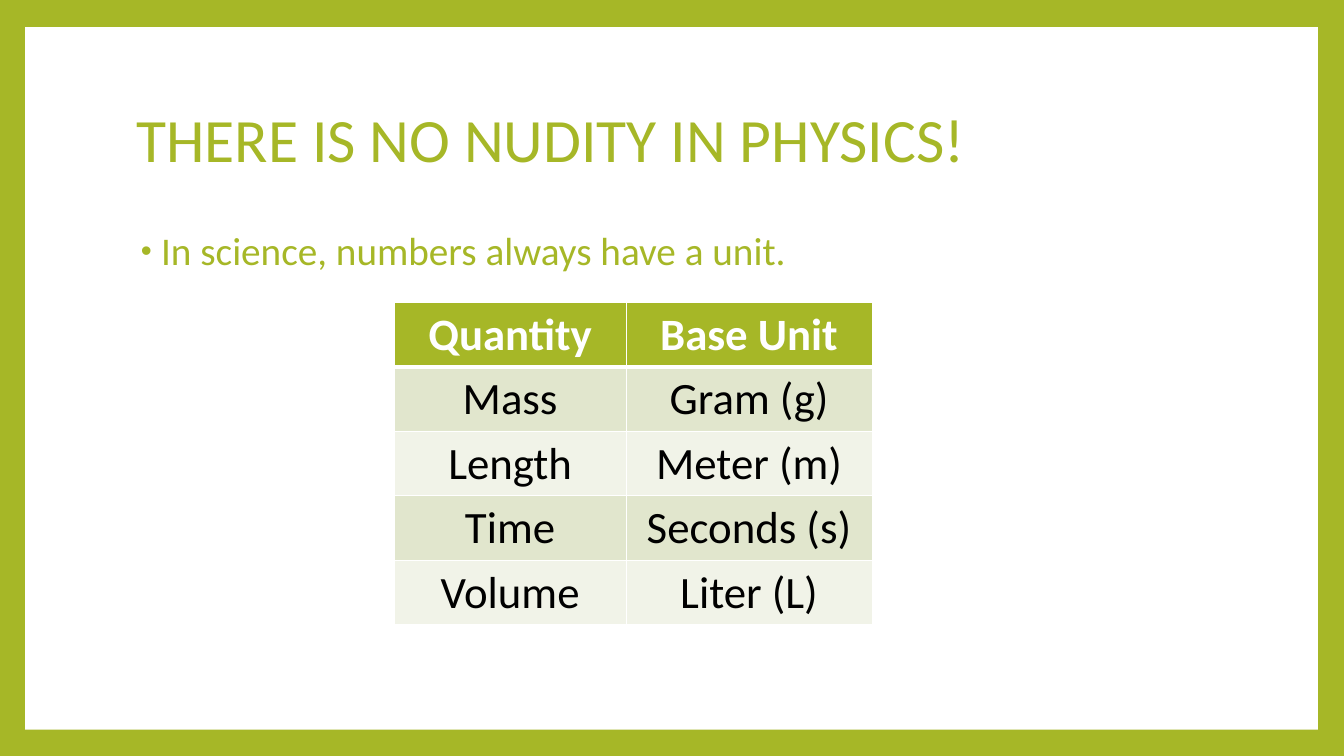
import pptx
import pptx.util
import pptx.dml.color
import pptx.enum.shapes
import pptx.enum.text
import pptx.oxml
import pptx.oxml.ns
import lxml.etree

Inches, Pt = pptx.util.Inches, pptx.util.Pt
RGBColor = pptx.dml.color.RGBColor
PP_ALIGN = pptx.enum.text.PP_ALIGN
MSO_ANCHOR = pptx.enum.text.MSO_ANCHOR
qn = pptx.oxml.ns.qn

HEADING = "THERE IS NO NUDITY IN PHYSICS!"
STATEMENT = "In science, numbers always have a unit."
UNITS = [
    ("Quantity", "Base Unit"),
    ("Mass", "Gram (g)"),
    ("Length", "Meter (m)"),
    ("Time", "Seconds (s)"),
    ("Volume", "Liter (L)"),
]
COLUMN_WIDTHS = (2.3, 2.44)
ROW_HEIGHT = 0.64

FONT = "Calibri"
GREEN = RGBColor(0xA6, 0xB7, 0x27)
WHITE = RGBColor(0xFF, 0xFF, 0xFF)
BLACK = RGBColor(0x00, 0x00, 0x00)
DARK_BAND = RGBColor(0xE1, 0xE6, 0xCD)
LIGHT_BAND = RGBColor(0xF1, 0xF3, 0xE8)


def set_font(paragraph, size, color, bold=False):
    font = paragraph.font
    font.name, font.size, font.bold = FONT, Pt(size), bold
    font.color.rgb = color


def add_bullet(paragraph):
    properties = paragraph._p.get_or_add_pPr()
    properties.set("marL", str(Inches(0.25)))
    properties.set("indent", str(Inches(-0.2)))
    color = lxml.etree.SubElement(properties, qn("a:buClr"))
    lxml.etree.SubElement(color, qn("a:srgbClr"), val=str(GREEN))
    lxml.etree.SubElement(properties, qn("a:buSzPct"), val="80000")
    lxml.etree.SubElement(properties, qn("a:buFont"), typeface="Arial")
    lxml.etree.SubElement(properties, qn("a:buChar"), char="•")


def add_borders(cell, widths):
    """Draw white borders; widths maps each side (L, R, T, B) to points."""
    properties = cell._tc.get_or_add_tcPr()
    for side, width in widths.items():
        line = lxml.etree.SubElement(properties, qn(f"a:ln{side}"), w=str(Pt(width)))
        fill = lxml.etree.SubElement(line, qn("a:solidFill"))
        lxml.etree.SubElement(fill, qn("a:srgbClr"), val=str(WHITE))


prs = pptx.Presentation()
prs.slide_width, prs.slide_height = Inches(13.33), Inches(7.5)
slide = prs.slides.add_slide(prs.slide_layouts[5])
slide.background.fill.solid()
slide.background.fill.fore_color.rgb = GREEN

panel = slide.shapes.add_shape(
    pptx.enum.shapes.MSO_SHAPE.RECTANGLE,
    Inches(0.25), Inches(0.27), Inches(12.82), Inches(6.97))
panel.shadow.inherit = False
panel.fill.solid()
panel.fill.fore_color.rgb = WHITE
panel.line.fill.background()
slide.shapes._spTree.insert(2, panel._element)  # behind the title

title = slide.shapes.title
title.left, title.top = Inches(1.25), Inches(0.67)
title.width, title.height = Inches(10.8), Inches(1.48)
title.text_frame.text = HEADING
title.text_frame.auto_size = pptx.enum.text.MSO_AUTO_SIZE.NONE
title.text_frame.vertical_anchor = MSO_ANCHOR.MIDDLE
heading = title.text_frame.paragraphs[0]
heading.alignment = PP_ALIGN.LEFT
heading.line_spacing = 0.9
set_font(heading, 44, GREEN)

body = slide.shapes.add_textbox(Inches(1.25), Inches(2.25), Inches(10.8), Inches(4.42))
body.text_frame.word_wrap = True
statement = body.text_frame.paragraphs[0]
statement.text = STATEMENT
statement.line_spacing = 0.9
statement.space_before = Pt(14)
add_bullet(statement)
set_font(statement, 28, GREEN)

units = slide.shapes.add_table(
    len(UNITS), len(COLUMN_WIDTHS), Inches(3.91), Inches(3),
    Inches(sum(COLUMN_WIDTHS)), Inches(ROW_HEIGHT * len(UNITS))).table
for column, width in zip(units.columns, COLUMN_WIDTHS):
    column.width = Inches(width)
for r, values in enumerate(UNITS):
    units.rows[r].height = Inches(ROW_HEIGHT)
    is_header = r == 0
    band = GREEN if is_header else DARK_BAND if r % 2 else LIGHT_BAND
    for c, value in enumerate(values):
        cell = units.cell(r, c)
        cell.text = value
        add_borders(cell, {"L": 1, "R": 1, "T": 3 if r == 1 else 1,
                           "B": 3 if is_header else 1})
        cell.fill.solid()
        cell.fill.fore_color.rgb = band
        entry = cell.text_frame.paragraphs[0]
        entry.alignment = PP_ALIGN.CENTER
        set_font(entry, 32, WHITE if is_header else BLACK, is_header)

prs.save("out.pptx")
